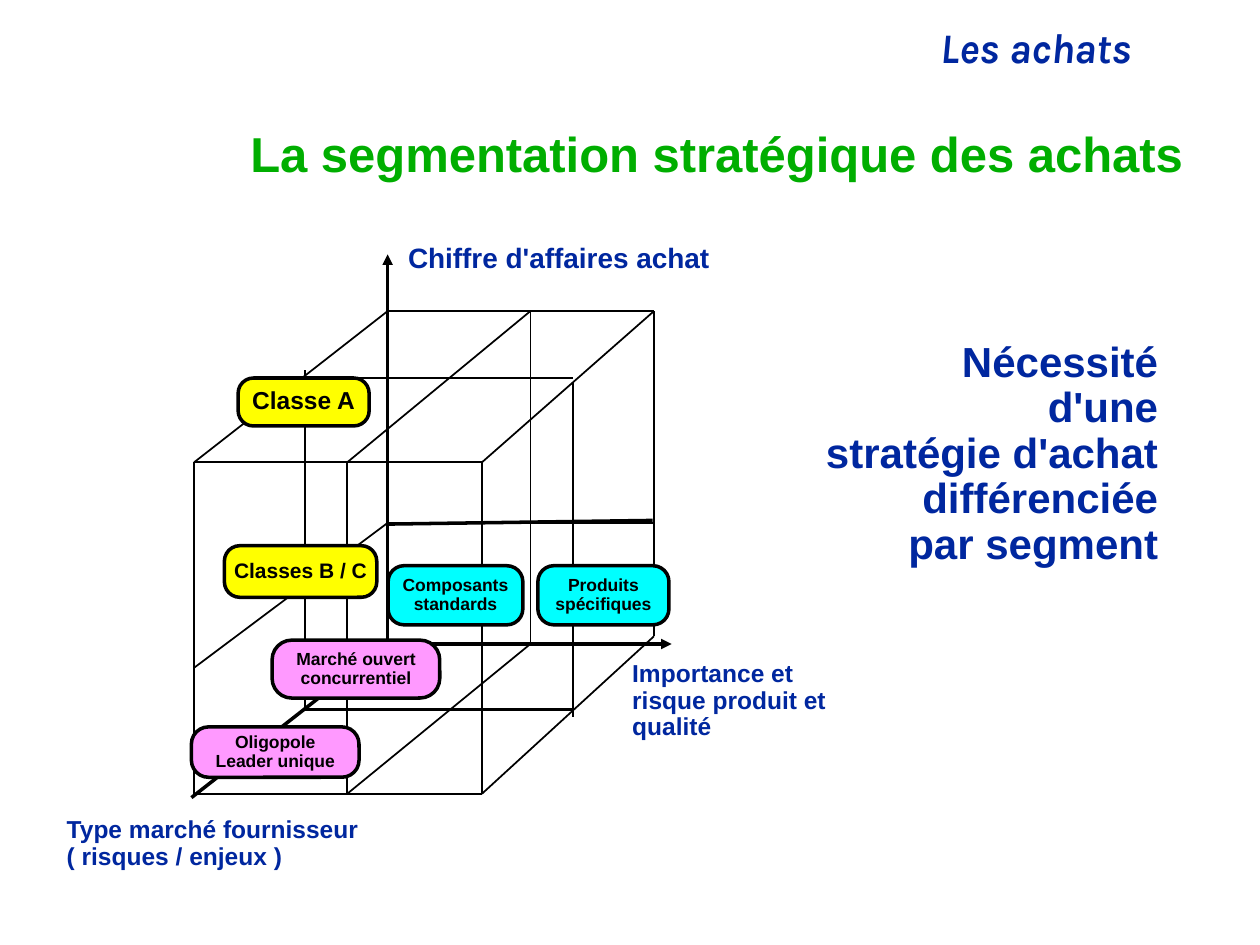
import pptx
import pptx.util
import pptx.dml.color
import pptx.enum.shapes
import pptx.enum.text
import pptx.oxml.ns
from lxml import etree

Pt = pptx.util.Pt
ALIGN = pptx.enum.text.PP_ALIGN
ANCHOR = pptx.enum.text.MSO_ANCHOR
SHAPE = pptx.enum.shapes.MSO_SHAPE
COLORS = {"navy": "00279F", "green": "00AE00", "black": "000000",
          "pink": "FF99FF", "yellow": "FFFF00", "cyan": "00FFFF"}

TITLE = "La segmentation stratégique des achats"
# left, top, width, height, paragraphs, format
LABELS = [
    (95.8, 12.2, 558, 33, ["Les achats"],
     dict(size=24, font="Karla", italic=True, align=ALIGN.RIGHT, wrap=True)),
    (226.1, 136.1, 187.2, 24.5, ["Chiffre d'affaires achat"], dict(size=16)),
    (354.2, 374.4, 158.4, 52, ["Importance et", "risque produit et qualité"],
     dict(size=14, wrap=True)),
    (31, 463.7, 180.7, 37.4, ["Type marché fournisseur", "( risques / enjeux )"],
     dict(size=14)),
    (464.4, 191.5, 204.5, 136.1,
     ["Nécessité\nd'une\nstratégie d'achat\ndifférenciée", "par segment"],
     dict(size=24, align=ALIGN.RIGHT)),
]
# left, top, width, height, corner, fill, size, paragraphs
SEGMENTS = [
    (155.5, 365.8, 95.8, 33.1, 0.34, "pink", 10, ["Marché ouvert", "concurrentiel"]),
    (136.1, 216, 74.9, 27.4, 0.32, "yellow", 14, ["Classe A"]),
    (109.4, 415.4, 95.8, 28.8, 0.34, "pink", 10, ["Oligopole", "Leader unique"]),
    (307.4, 323.3, 74.9, 33.8, 0.27, "cyan", 10, ["Produits", "spécifiques"]),
    (221.8, 323.3, 77, 33.8, 0.27, "cyan", 10, ["Composants", "standards"]),
    (128.2, 311.8, 87.1, 29.5, 0.3, "yellow", 12, ["Classes B / C"]),
]

# Cube: x of the left, centre and right edges on the back and front faces
BACK_X = (221.5, 303.1, 373.7)
FRONT_X = (110.9, 198.4, 275.4)
MIDDLE_X = (174.2, 327.4)
BACK_TOP, BACK_HALF, BACK_BOTTOM = 177.8, 298.8, 368
FRONT_TOP, FRONT_HALF, FRONT_BOTTOM = 264.2, 381.6, 453.6
MIDDLE_TOP, MIDDLE_BOTTOM = 216, 405.5
RIGHT_CORNER = 363.6

ACROSS = [(BACK_X, BACK_TOP), (BACK_X, BACK_HALF),
          (MIDDLE_X, MIDDLE_TOP),
          (FRONT_X, FRONT_TOP), (FRONT_X, FRONT_BOTTOM)]
UPRIGHT = [(BACK_X[1], BACK_TOP, BACK_BOTTOM), (BACK_X[2], BACK_TOP, RIGHT_CORNER),
           (MIDDLE_X[0], 211.7, 406), (MIDDLE_X[1], 219, 409.7)]
UPRIGHT += [(x, FRONT_TOP, FRONT_BOTTOM) for x in FRONT_X]
THIN = [(xs[0], y, xs[-1], y) for xs, y in ACROSS]
THIN += [(x, top, x, bottom) for x, top, bottom in UPRIGHT]
THIN += [(x, BACK_TOP, front, FRONT_TOP) for x, front in zip(BACK_X, FRONT_X)]
THIN += [(BACK_X[0], BACK_HALF, FRONT_X[0], FRONT_HALF),
         (BACK_X[1], BACK_BOTTOM, FRONT_X[1], FRONT_BOTTOM),
         (BACK_X[2], RIGHT_CORNER, FRONT_X[2], FRONT_BOTTOM)]
THICK = [(BACK_X[0], BACK_BOTTOM, 109.4, 455.8),
         (BACK_X[0], 299.5, 373, 297.4),
         (MIDDLE_X[0], MIDDLE_BOTTOM, MIDDLE_X[1], MIDDLE_BOTTOM)]
ARROWS = [(BACK_X[0], BACK_BOTTOM, BACK_X[0], 145.4),
          (BACK_X[0], BACK_BOTTOM, 383.8, BACK_BOTTOM)]


def rgb(name):
    return pptx.dml.color.RGBColor.from_string(COLORS[name])


def write(shape, paragraphs, size, color="navy", font="Arial", italic=False,
          align=ALIGN.LEFT, anchor=ANCHOR.TOP, wrap=False):
    frame = shape.text_frame
    frame.word_wrap = wrap
    frame.auto_size = pptx.enum.text.MSO_AUTO_SIZE.NONE
    frame.vertical_anchor = anchor
    frame.margin_left = frame.margin_right = Pt(7.2)
    frame.margin_top = frame.margin_bottom = Pt(3.6)
    for index, text in enumerate(paragraphs):
        para = frame.add_paragraph() if index else frame.paragraphs[0]
        para.text = text
        para.alignment = align
        para.line_spacing = 0.9
        for span in para.runs:
            span.font.name = font
            span.font.size = Pt(size)
            span.font.bold = True
            span.font.italic = italic
            span.font.color.rgb = rgb(color)


def draw_line(page, ends, width, arrow=False):
    line = page.shapes.add_connector(pptx.enum.shapes.MSO_CONNECTOR.STRAIGHT,
                                     *[Pt(value) for value in ends])
    line.line.color.rgb = rgb("black")
    line.line.width = Pt(width)
    if arrow:
        etree.SubElement(line.line._get_or_add_ln(),
                         pptx.oxml.ns.qn("a:tailEnd"), type="triangle")
    etree.SubElement(line._element.spPr, pptx.oxml.ns.qn("a:effectLst"))


def draw_segment(page, place, corner, fill, size, paragraphs):
    box = page.shapes.add_shape(SHAPE.ROUNDED_RECTANGLE, *[Pt(v) for v in place])
    box.adjustments[0] = corner
    box.shadow.inherit = False
    box.fill.solid()
    box.fill.fore_color.rgb = rgb(fill)
    box.line.color.rgb = rgb("black")
    box.line.width = Pt(2)
    write(box, paragraphs, size, color="black", align=ALIGN.CENTER,
          anchor=ANCHOR.MIDDLE)


def main():
    deck = pptx.Presentation()
    deck.slide_width, deck.slide_height = Pt(720), Pt(540)
    page = deck.slides.add_slide(deck.slide_layouts[5])

    title = page.shapes.title
    title.left, title.top, title.width, title.height = Pt(113), Pt(71.3), Pt(570.2), Pt(36)
    write(title, [TITLE], 28, color="green", align=ALIGN.RIGHT,
          anchor=ANCHOR.MIDDLE, wrap=True)

    for ends in THIN:
        draw_line(page, ends, 1)
    for ends in THICK:
        draw_line(page, ends, 2)
    for ends in ARROWS:
        draw_line(page, ends, 2, arrow=True)
    for *place, corner, fill, size, paragraphs in SEGMENTS:
        draw_segment(page, place, corner, fill, size, paragraphs)
    for *place, paragraphs, style in LABELS:
        write(page.shapes.add_textbox(*[Pt(v) for v in place]), paragraphs, **style)

    deck.save("out.pptx")


if __name__ == "__main__":
    main()
